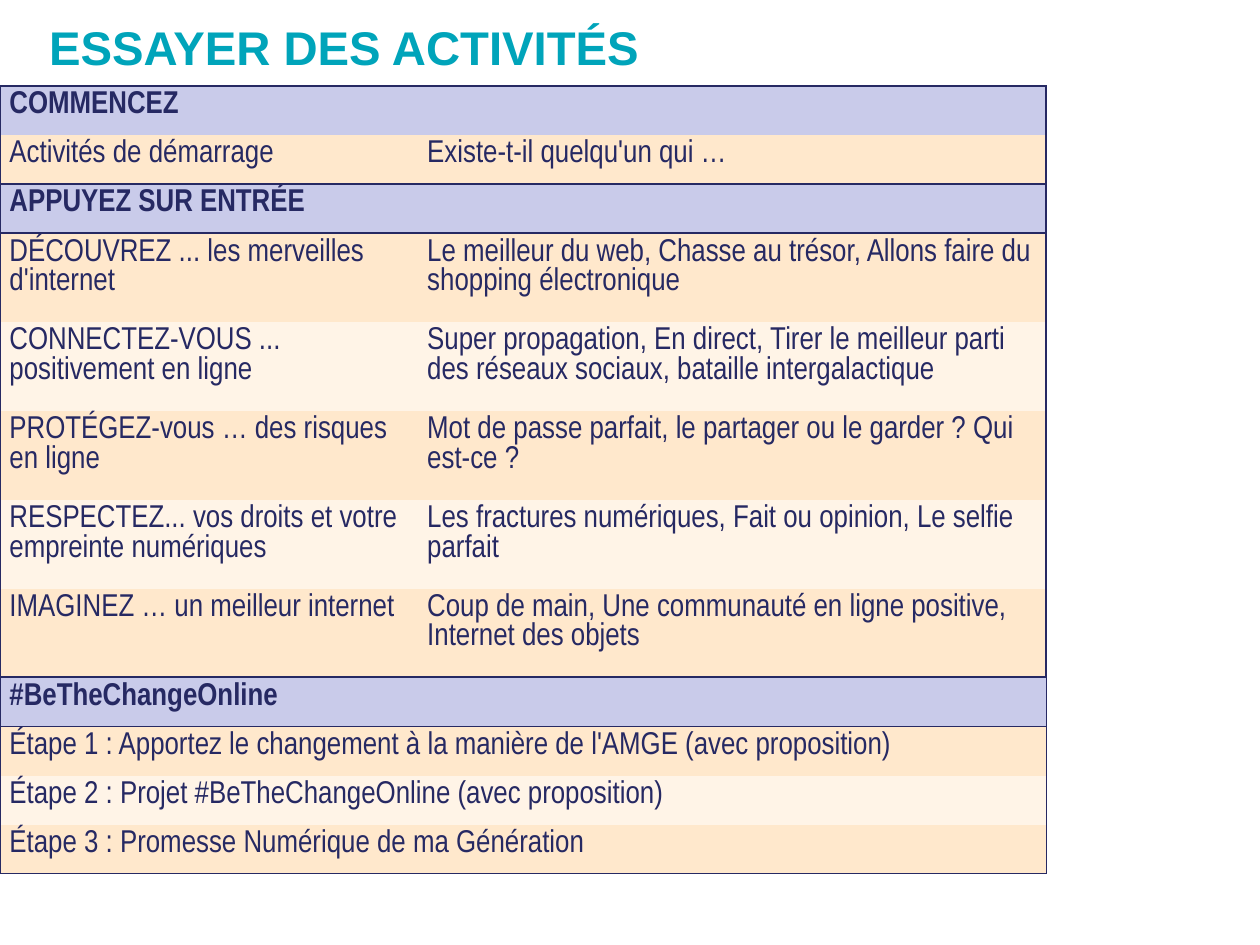
from dataclasses import dataclass

from lxml.etree import SubElement
from pptx import Presentation
from pptx.dml.color import RGBColor
from pptx.enum.text import MSO_ANCHOR, PP_ALIGN
from pptx.oxml.ns import qn
from pptx.slide import Slide
from pptx.table import Table, _Cell
from pptx.util import Inches, Pt


@dataclass(frozen=True)
class Theme:
    teal: str = "00A4BA"
    navy: str = "262963"
    head: str = "C9CBEA"
    bands: tuple[str, str] = ("FFE8CC", "FFF4E7")
    title_font: str = "Arial"
    body_font: str = "Arial Narrow"
    title_size: int = 36
    body_size: int = 24


@dataclass(frozen=True)
class Section:
    head: str
    items: list[tuple[str, ...]]
    line: float = 1.5  # outline width in points
    tall: bool = False  # items take two lines

    @property
    def rows(self) -> list[tuple[str, ...]]:
        return [(self.head,), *self.items]


THEME = Theme()
WIDE, HIGH = 13.33, 10
COLS = (4.42, 6.65)
LOW_ROW, TALL_ROW = 0.52, 0.94
NO_GRID = "{2D5ABB26-0587-4C30-8999-92F81FD0307C}"

SECTIONS = [
    Section("COMMENCEZ", [
        ("Activités de démarrage", "Existe-t-il quelqu'un qui …"),
    ]),
    Section("APPUYEZ SUR ENTRÉE", [
        ("DÉCOUVREZ ... les merveilles d'internet",
         "Le meilleur du web, Chasse au trésor, Allons faire du shopping électronique"),
        ("CONNECTEZ-VOUS ... positivement en ligne",
         "Super propagation, En direct, Tirer le meilleur parti des réseaux sociaux, "
         "bataille intergalactique"),
        ("PROTÉGEZ-vous … des risques en ligne",
         "Mot de passe parfait, le partager ou le garder ? Qui est-ce ?"),
        ("RESPECTEZ... vos droits et votre empreinte numériques",
         "Les fractures numériques, Fait ou opinion, Le selfie parfait"),
        ("IMAGINEZ … un meilleur internet",
         "Coup de main, Une communauté en ligne positive, Internet des objets"),
    ], tall=True),
    Section("#BeTheChangeOnline", [
        ("Étape 1 : Apportez le changement à la manière de l'AMGE (avec proposition)",),
        ("Étape 2 : Projet #BeTheChangeOnline (avec proposition)",),
        ("Étape 3 : Promesse Numérique de ma Génération",),
    ], line=1),
]


def add_title(slide: Slide, text: str) -> None:
    title = slide.shapes.title
    title.left, title.top = Inches(0.52), Inches(0.27)
    title.width, title.height = Inches(11.36), Inches(0.52)
    frame = title.text_frame
    frame.text = text
    frame.word_wrap = True
    frame.vertical_anchor = MSO_ANCHOR.MIDDLE
    frame.margin_left = frame.margin_right = 0
    frame.margin_top = frame.margin_bottom = 0
    para = frame.paragraphs[0]
    para.alignment = PP_ALIGN.LEFT
    para.line_spacing = 0.9
    font = para.font
    font.name, font.size, font.bold = THEME.title_font, Pt(THEME.title_size), True
    font.color.rgb = RGBColor.from_string(THEME.teal)


def add_edges(cell: _Cell, sides: str, width: float) -> None:
    """Draw the given sides, named in the order L, R, T, B."""
    props = cell._tc.get_or_add_tcPr()
    for side in sides:
        line = SubElement(props, qn(f"a:ln{side}"), w=str(Pt(width)))
        fill = SubElement(line, qn("a:solidFill"))
        SubElement(fill, qn("a:srgbClr"), val=THEME.navy)


def fill_cell(cell: _Cell, text: str, color: str, bold: bool) -> None:
    cell.fill.solid()
    cell.fill.fore_color.rgb = RGBColor.from_string(color)
    cell.text = text
    font = cell.text_frame.paragraphs[0].font
    font.name, font.size, font.bold = THEME.body_font, Pt(THEME.body_size), bold
    font.color.rgb = RGBColor.from_string(THEME.navy)


def add_section(table: Table, start: int, part: Section) -> None:
    last = len(part.items)
    for i, texts in enumerate(part.rows):
        row = start + i
        table.rows[row].height = Inches(TALL_ROW if part.tall and i else LOW_ROW)
        cells = [table.cell(row, col) for col in range(len(COLS))]
        # Outline around the whole section
        ends = ("T" if i == 0 else "") + ("B" if i == last else "")
        if len(texts) == 1:
            cells[0].merge(cells[1])
            add_edges(cells[0], "LR" + ends, part.line)
        else:
            add_edges(cells[0], "L" + ends, part.line)
        add_edges(cells[1], "R" + ends, part.line)
        # Heading colour first, then alternating bands
        color = THEME.bands[(i - 1) % 2] if i else THEME.head
        for cell, text in zip(cells, texts):
            fill_cell(cell, text, color, bold=i == 0)


def add_grid(slide: Slide) -> None:
    count = sum(len(part.rows) for part in SECTIONS)
    shape = slide.shapes.add_table(
        count, len(COLS), 0, Inches(0.91), Inches(sum(COLS)), Inches(count * LOW_ROW))
    table = shape.table
    table.first_row = table.horz_banding = False
    table._tbl.tblPr.find(qn("a:tableStyleId")).text = NO_GRID
    for col, width in zip(table.columns, COLS):
        col.width = Inches(width)
    start = 0
    for part in SECTIONS:
        add_section(table, start, part)
        start += len(part.rows)


def main() -> None:
    deck = Presentation()
    deck.slide_width, deck.slide_height = Inches(WIDE), Inches(HIGH)
    slide = deck.slides.add_slide(deck.slide_layouts[5])  # title only
    add_title(slide, "ESSAYER DES ACTIVITÉS")
    add_grid(slide)
    deck.save("out.pptx")


if __name__ == "__main__":
    main()
